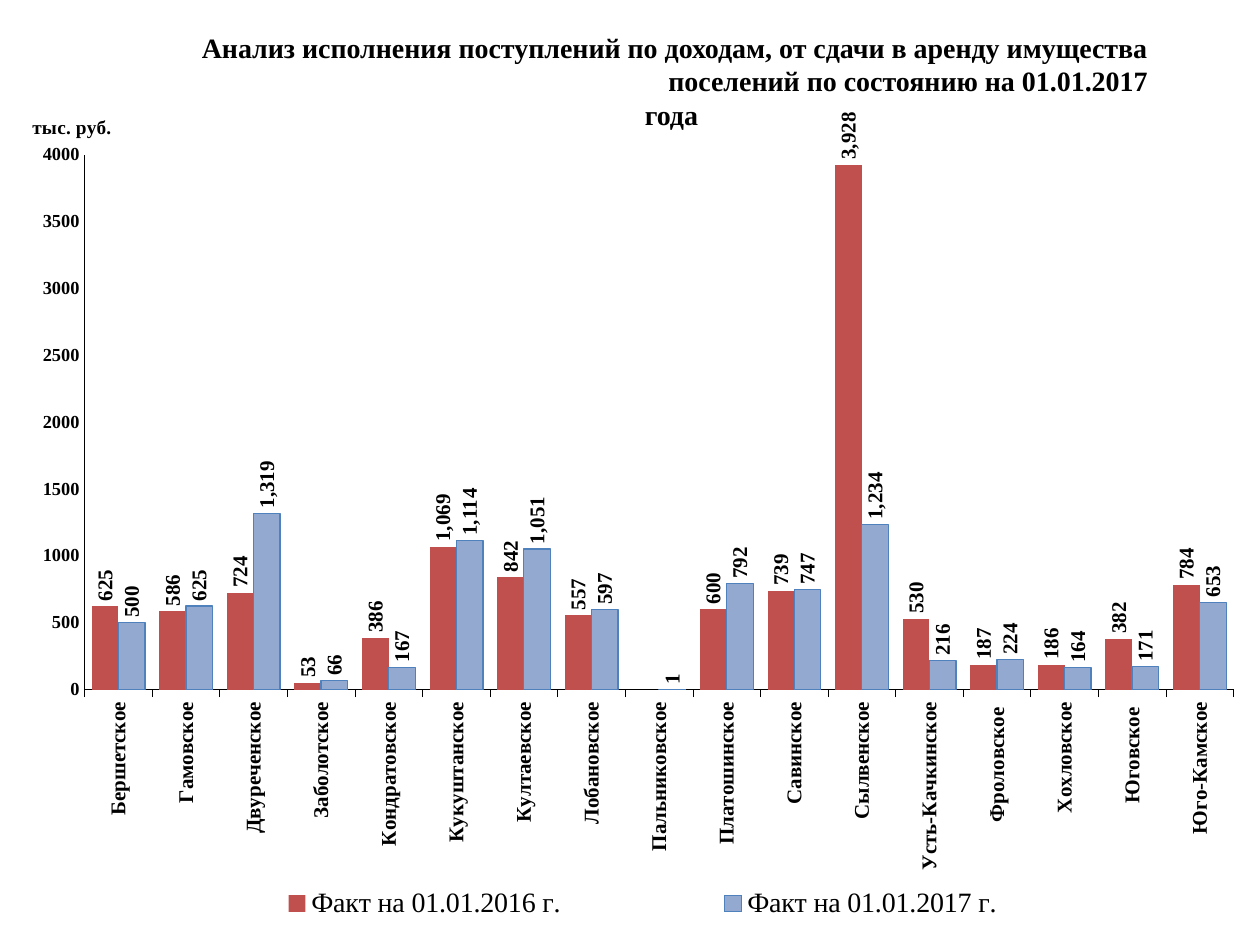
from lxml.etree import SubElement
from pptx import Presentation
from pptx.chart.data import CategoryChartData
from pptx.dml.color import RGBColor
from pptx.enum.chart import (XL_CHART_TYPE, XL_LABEL_POSITION,
                             XL_LEGEND_POSITION, XL_TICK_MARK)
from pptx.enum.text import MSO_ANCHOR, PP_ALIGN
from pptx.oxml.ns import qn
from pptx.util import Inches, Pt


def style_font(font, size, bold=True, color="000000"):
    font.name = "Times New Roman"
    font.size = Pt(size)
    font.bold = bold
    font.color.rgb = RGBColor.from_string(color)


def place(part, index, **layout):
    """Give a chart part a manual layout, in fractions of the chart."""
    for old in part.findall(qn("c:layout")):
        part.remove(old)
    holder = SubElement(part, qn("c:layout"))
    part.insert(index, holder)
    manual = SubElement(holder, qn("c:manualLayout"))
    for tag, value in layout.items():
        SubElement(manual, qn(f"c:{tag}")).set("val", str(value))


prs = Presentation()
prs.slide_width, prs.slide_height = Inches(10), Inches(7.5)
slide = prs.slides.add_slide(prs.slide_layouts[5])

# Data: settlement, income in 2016, income in 2017
income = [
    ("Бершетское", 625, 500),
    ("Гамовское", 586, 625),
    ("Двуреченское", 724, 1319),
    ("Заболотское", 53, 66),
    ("Кондратовское", 386, 167),
    ("Кукуштанское", 1069, 1114),
    ("Култаевское", 842, 1051),
    ("Лобановское", 557, 597),
    ("Пальниковское", None, 1),
    ("Платошинское", 600, 792),
    ("Савинское", 739, 747),
    ("Сылвенское", 3928, 1234),
    ("Усть-Качкинское", 530, 216),
    ("Фроловское ", 187, 224),
    ("Хохловское", 186, 164),
    ("Юговское ", 382, 171),
    ("Юго-Камское", 784, 653),
]
settlements, fact_2016, fact_2017 = zip(*income)
data = CategoryChartData()
data.categories = settlements
data.add_series("Факт на 01.01.2016 г.", fact_2016)
data.add_series("Факт на 01.01.2017 г.", fact_2017)

# Chart
chart = slide.shapes.add_chart(
    XL_CHART_TYPE.COLUMN_CLUSTERED, Inches(0.2), Inches(0.05),
    Inches(9.61), Inches(7.38), data).chart
chart.has_title = False
chart.font.name = "Calibri"
chart.font.size = Pt(10)
plot = chart.plots[0]
plot.gap_width = 54
plot.overlap = 0
plot.vary_by_categories = False
place(chart._chartSpace.chart.plotArea, 0, layoutTarget="inner",
      xMode="edge", yMode="edge", x=0.049, y=0.16, w=0.949, h=0.575)

# Columns and their upright values
for series, fill in zip(plot.series, ("C0504D", "93A9CF")):
    series.format.fill.solid()
    series.format.fill.fore_color.rgb = RGBColor.from_string(fill)
    labels = series.data_labels
    labels.show_value = True
    labels.number_format = "#,##0"
    labels.number_format_is_linked = False
    labels.position = XL_LABEL_POSITION.OUTSIDE_END
    style_font(labels.font, 12)
    labels._element.find(qn("c:txPr")).find(qn("a:bodyPr")).set("rot", "-5400000")
outline = plot.series[1].format.line
outline.color.rgb = RGBColor.from_string("4F81BD")
outline.width = Pt(0.75)

# Axes
settlement_axis, income_axis = chart.category_axis, chart.value_axis
for axis, size, tick in ((settlement_axis, 12, XL_TICK_MARK.OUTSIDE),
                         (income_axis, 10.5, XL_TICK_MARK.NONE)):
    axis.has_major_gridlines = False
    axis.major_tick_mark = tick
    axis.minor_tick_mark = XL_TICK_MARK.NONE
    axis.format.line.color.rgb = RGBColor.from_string("000000")
    axis.format.line.width = Pt(0.25)
    style_font(axis.tick_labels.font, size)
settlement_axis._element.find(qn("c:txPr")).find(qn("a:bodyPr")).set("rot", "-5400000")
income_axis.minimum_scale = 0
income_axis.maximum_scale = 4000
income_axis.major_unit = 500
income_axis.tick_labels.number_format = "0"
income_axis.tick_labels.number_format_is_linked = False

# Unit above the value axis
unit = income_axis.axis_title
unit_run = unit.text_frame.paragraphs[0].add_run()
unit_run.text = "тыс. руб."
style_font(unit_run.font, 11)
unit_body = unit.text_frame._txBody.find(qn("a:bodyPr"))
unit_body.set("rot", "0")
unit_body.set("vert", "horz")
place(unit._element, 1, xMode="edge", yMode="edge", x=0.003, y=0.113)

# Legend
chart.has_legend = True
legend = chart.legend
legend.position = XL_LEGEND_POSITION.BOTTOM
legend.include_in_layout = False
style_font(legend.font, 16, bold=False)
place(legend._element, 1, xMode="edge", yMode="edge",
      x=0.09, y=0.94, w=0.84, h=0.05)

# Title, in front of the chart
title = slide.shapes.title
slide.shapes._spTree.append(title._element)
title.left, title.top = Inches(1.55), Inches(0.24)
title.width, title.height = Inches(7.56), Inches(0.8)
frame = title.text_frame
frame.margin_left = frame.margin_right = frame.margin_top = frame.margin_bottom = 0
frame.vertical_anchor = MSO_ANCHOR.TOP
frame.word_wrap = True
title_lines = [
    ("Анализ исполнения поступлений по доходам, от сдачи в аренду имущества", PP_ALIGN.RIGHT),
    ("поселений по состоянию на 01.01.2017", PP_ALIGN.RIGHT),
    ("года", PP_ALIGN.CENTER),
]
for number, (text, alignment) in enumerate(title_lines):
    line = frame.add_paragraph() if number else frame.paragraphs[0]
    line.alignment = alignment
    line.space_before = Pt(0)
    run = line.add_run()
    run.text = text
    style_font(run.font, 16)

prs.save("out.pptx")
